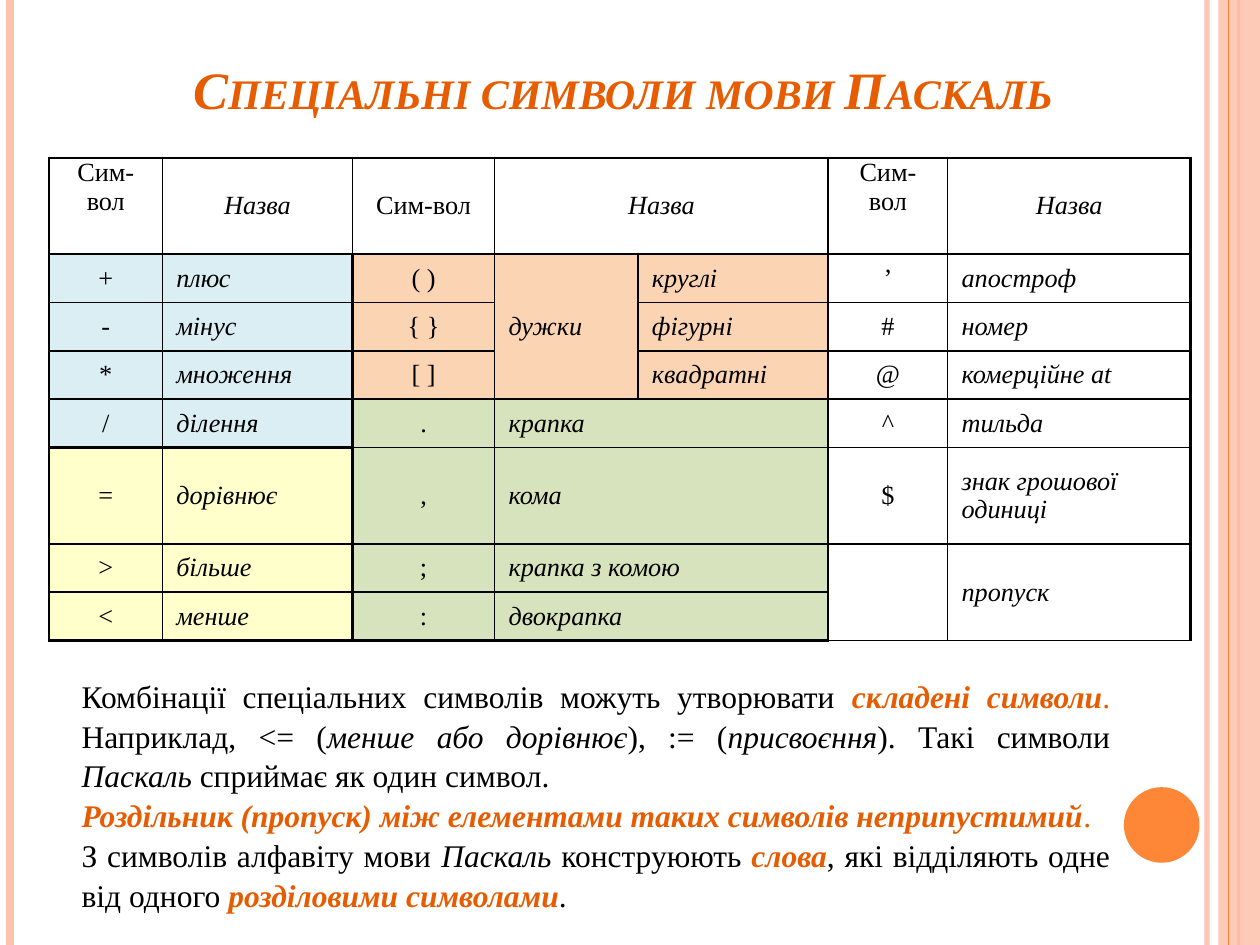
from lxml import etree
from pptx import Presentation
from pptx import util as u
from pptx.dml.color import RGBColor
from pptx.enum import shapes, text
from pptx.oxml import ns

WIDE, HIGH = u.Inches(10), u.Inches(7.5)
FONT = "Times New Roman"
HUES = {"ink": "000000", "key": "E75C01", "pale": "FEC3AE", "sun": "FE8637",
        "blue": "DAEEF3", "peach": "FBD4B4", "green": "D6E3BC", "lemon": "FFFFCC"}
MID, LEFT, FULL = text.PP_ALIGN.CENTER, text.PP_ALIGN.LEFT, text.PP_ALIGN.JUSTIFY

COLS = [0.9, 1.51, 1.13, 1.14, 1.51, 0.95, 1.93]
ROWS = [2, 1, 1, 1, 1, 2, 1, 1]
SIGNS = (0, 2, 5)  # columns of symbols; the others hold names
GRID = [
    ["Сим-вол", "Назва", "Сим-вол", "Назва", "", "Сим-вол", "Назва"],
    ["+", "плюс", "( )", "дужки", "круглі", "’", "апостроф"],
    ["-", "мінус", "{ }", "", "фігурні", "#", "номер"],
    ["*", "множення", "[ ]", "", "квадратні", "@", "комерційне at"],
    ["/", "ділення", ".", "крапка", "", "^", "тильда"],
    ["=", "дорівнює", ",", "кома", "", "$", "знак грошової одиниці"],
    [">", "більше", ";", "крапка з комою", "", "", "пропуск"],
    ["<", "менше", ":", "двокрапка", "", "", ""],
]
# first row, first column, last row, last column, fill
BLOCKS = [(0, 0, 0, 6, None), (1, 0, 4, 1, "blue"), (5, 0, 7, 1, "lemon"),
          (1, 2, 3, 4, "peach"), (4, 2, 7, 4, "green"), (1, 5, 7, 6, None)]
SPANS = [(1, 3, 3, 3), (6, 5, 7, 5), (6, 6, 7, 6)]
SPANS += [(row, 3, row, 4) for row in (0, 4, 5, 6, 7)]

# style letters: o orange, b bold, i italic
NOTES = [
    [("Комбінації спеціальних символів можуть утворювати ", ""),
     ("складені символи", "obi"), (".", "o"), (" Наприклад, <= (", ""),
     ("менше або дорівнює", "i"), ("), := (", ""), ("присвоєння", "i"),
     ("). Такі символи ", ""), ("Паскаль", "i"),
     (" сприймає як один символ. ", "")],
    [("Роздільник (пропуск) між елементами таких символів неприпустимий", "obi"),
     (".", "o")],
    [("З символів алфавіту мови ", ""), ("Паскаль", "i"), (" конструюють ", ""),
     ("слова", "obi"), (", які відділяють одне від одного ", ""),
     ("розділовими символами", "obi"), (".", "")],
]


def tint(name):
    return RGBColor.from_string(HUES[name])


def frame(x, y, w, h):
    """Turn shares of the slide into lengths."""
    return int(x * WIDE), int(y * HIGH), int(w * WIDE), int(h * HIGH)


def fade(part, share):
    """Set the opacity of the one colour inside an XML part."""
    hue = next(part.iter(ns.qn("a:srgbClr")))
    etree.SubElement(hue, ns.qn("a:alpha")).set("val", str(share * 1000))


def add_run(para, words, style, size):
    run = para.add_run()
    run.text = words
    font = run.font
    font.name, font.size = FONT, u.Pt(size)
    font.bold, font.italic = "b" in style, "i" in style
    font.color.rgb = tint("key" if "o" in style else "ink")
    return run


def add_rule(slide, x, hue, size, share=100):
    x = int(x * WIDE)
    rule = slide.shapes.add_connector(shapes.MSO_CONNECTOR.STRAIGHT, x, 0, x, HIGH)
    rule.line.color.rgb = tint(hue)
    rule.line.width = u.Pt(size)
    props = rule.line._get_or_add_ln().getparent()
    etree.SubElement(props, ns.qn("a:effectLst"))
    if share < 100:
        fade(props, share)


def add_solid(slide, kind, box, hue):
    form = slide.shapes.add_shape(kind, *box)
    form.shadow.inherit = False
    form.fill.solid()
    form.fill.fore_color.rgb = tint(hue)
    form.line.fill.background()
    return form


def add_decor(slide):
    kinds = shapes.MSO_SHAPE
    add_rule(slide, 0.958, "pale", 3, 93)
    add_rule(slide, 0.008, "pale", 4.5)
    add_rule(slide, 0.983, "sun", 1.5)
    band = add_solid(slide, kinds.RECTANGLE, frame(0.967, 0, 0.033, 1), "pale")
    fade(band._element.spPr, 87)
    add_rule(slide, 0.975, "sun", 0.75)
    add_solid(slide, kinds.OVAL, frame(0.892, 0.833, 0.06, 0.08), "sun")


def add_title(slide, box):
    body = slide.shapes.add_textbox(*box).text_frame
    body.word_wrap = True
    body.vertical_anchor = text.MSO_ANCHOR.BOTTOM
    para = body.paragraphs[0]
    para.alignment = MID
    run = add_run(para, "Спеціальні символи мови Паскаль", "obi", 30)
    run.font._element.set("cap", "small")


def add_edges(cell, sizes):
    """Draw the left, right, top and bottom border of a cell."""
    props = cell._tc.get_or_add_tcPr()
    for spot, (side, size) in enumerate(zip("LRTB", sizes)):
        edge = etree.Element(ns.qn("a:ln" + side), w=str(u.Pt(size)))
        fill = etree.SubElement(edge, ns.qn("a:solidFill"))
        etree.SubElement(fill, ns.qn("a:srgbClr"), val=HUES["ink"])
        props.insert(spot, edge)


def fill_cell(cell, row, col, hue):
    cell.margin_left = cell.margin_right = u.Inches(0.11)
    cell.margin_top = cell.margin_bottom = 0
    high = row == 0 and col in (0, 5)
    cell.vertical_anchor = text.MSO_ANCHOR.TOP if high else text.MSO_ANCHOR.MIDDLE
    if hue:
        cell.fill.solid()
        cell.fill.fore_color.rgb = tint(hue)
    else:
        cell.fill.background()
    para = cell.text_frame.paragraphs[0]
    para.alignment = MID if row == 0 or col in SIGNS else LEFT
    para.font.size = u.Pt(15)
    if GRID[row][col]:
        add_run(para, GRID[row][col], "" if col in SIGNS else "i", 15)


def add_grid(slide, box):
    table = slide.shapes.add_table(len(ROWS), len(COLS), *box).table
    table.first_row = table.horz_banding = False
    for line, share in zip(table.columns, COLS):
        line.width = int(box[2] * share / sum(COLS))
    for line, share in zip(table.rows, ROWS):
        line.height = int(box[3] * share / sum(ROWS))
    for top, left, low, right, hue in BLOCKS:
        for row in range(top, low + 1):
            for col in range(left, right + 1):
                cell = table.cell(row, col)
                fill_cell(cell, row, col, hue)
                outer = (col == left, col == right, row == top, row == low)
                add_edges(cell, [1.5 if side else 1 for side in outer])
    for top, left, low, right in SPANS:
        table.cell(top, left).merge(table.cell(low, right))


def add_notes(slide, box):
    body = slide.shapes.add_textbox(*box).text_frame
    body.word_wrap = True
    for spot, runs in enumerate(NOTES):
        para = body.add_paragraph() if spot else body.paragraphs[0]
        para.alignment = FULL
        para.line_spacing = 1.05
        for words, style in runs:
            add_run(para, words, style, 18)


def main():
    deck = Presentation()
    deck.slide_width, deck.slide_height = WIDE, HIGH
    slide = deck.slides.add_slide(deck.slide_layouts[6])
    add_decor(slide)
    add_title(slide, frame(0.086, 0.03, 0.817, 0.104))
    add_grid(slide, frame(0.039, 0.167, 0.906, 0.511))
    add_notes(slide, frame(0.055, 0.708, 0.836, 0.256))
    deck.save("out.pptx")


if __name__ == "__main__":
    main()
